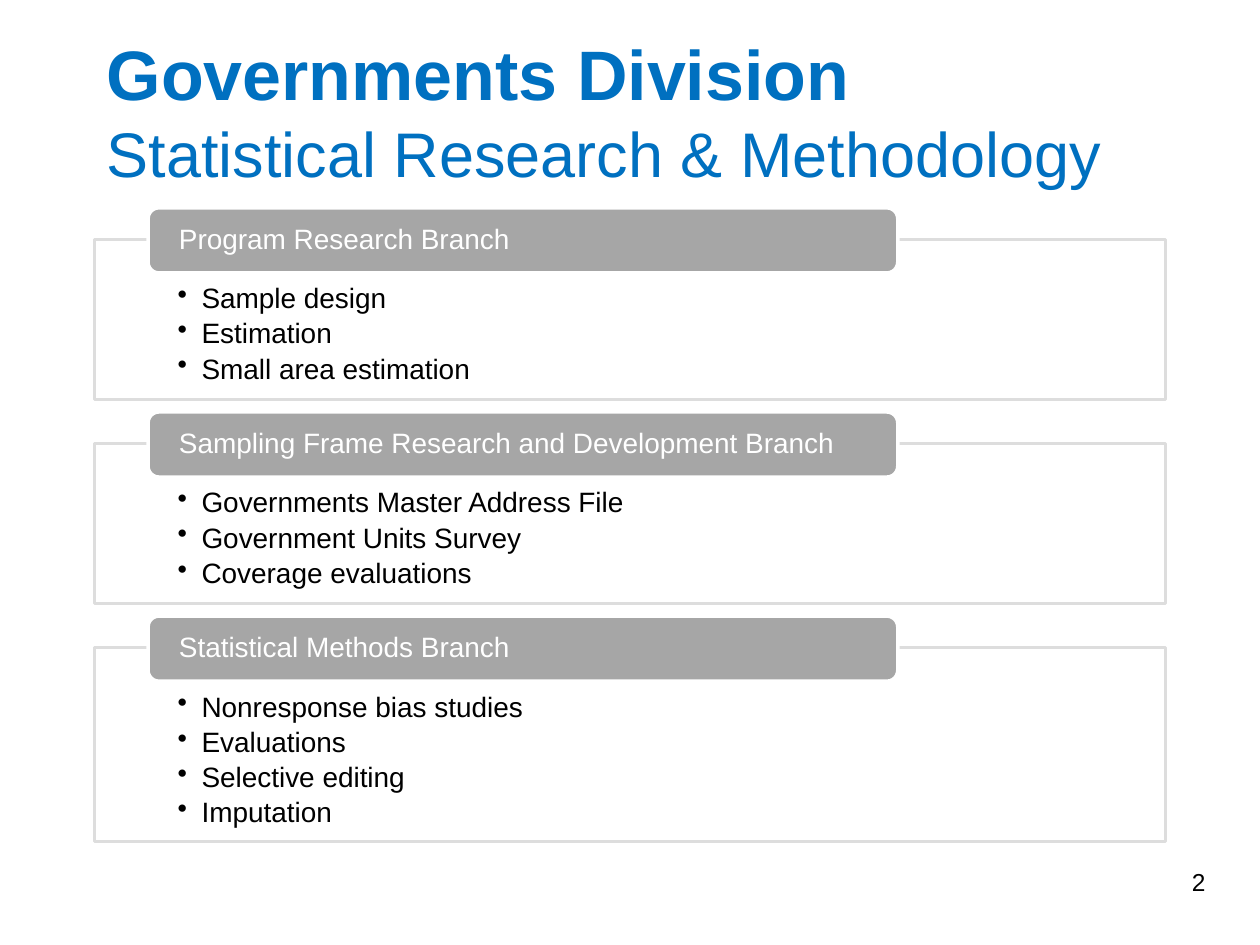
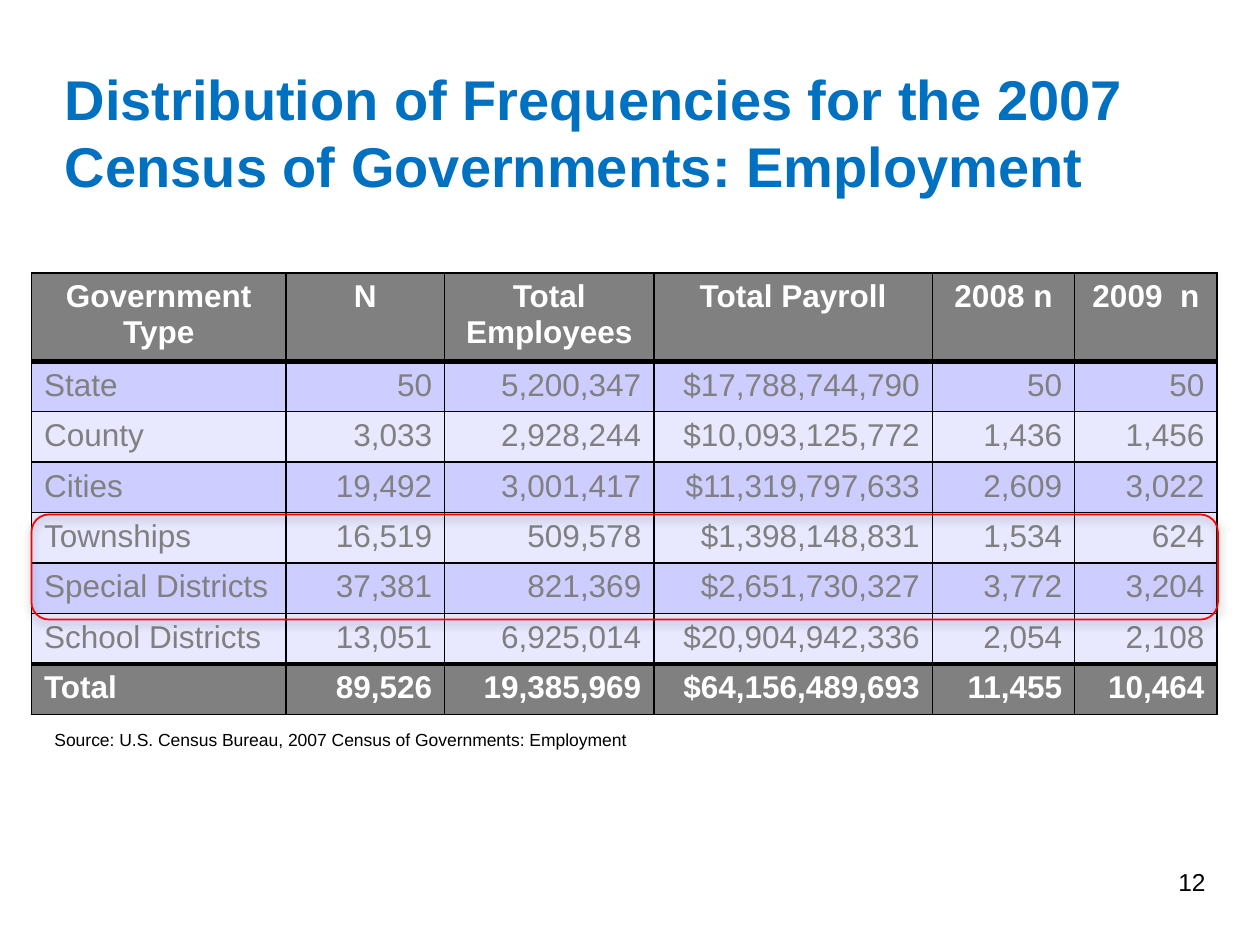
from dataclasses import dataclass

from lxml.etree import SubElement
from pptx import Presentation
from pptx.dml.color import RGBColor
from pptx.enum.shapes import MSO_SHAPE
from pptx.enum.text import MSO_ANCHOR, PP_ALIGN
from pptx.oxml import parse_xml
from pptx.oxml.ns import nsdecls, qn
from pptx.util import Inches, Pt

COLUMNS, ROWS = 120, 90
WIDTH, HEIGHT = Inches(10), Inches(7.5)
FONT = "Arial"
TITLE_BLUE, BLACK, WHITE = "0070C0", "000000", "FFFFFF"
FRAME_GRAY, HEADING_GRAY, TABLE_GRAY = "DDDDDD", "A6A6A6", "808080"
BANDS = "CDCDFF", "E8E8FF"
HIGHLIGHT = "FF0000"

BRANCHES = {
    "Program Research Branch": [
        "Sample design", "Estimation", "Small area estimation"],
    "Sampling Frame Research and Development Branch": [
        "Governments Master Address File", "Government Units Survey",
        "Coverage evaluations"],
    "Statistical Methods Branch": [
        "Nonresponse bias studies", "Evaluations", "Selective editing",
        "Imputation"],
}

FREQUENCIES = [
    ("Government Type", "N", "Total Employees", "Total Payroll", "2008 n", "2009  n"),
    ("State", "50", "5,200,347", "$17,788,744,790", "50", "50"),
    ("County", "3,033", "2,928,244", "$10,093,125,772", "1,436", "1,456"),
    ("Cities", "19,492", "3,001,417", "$11,319,797,633", "2,609", "3,022"),
    ("Townships", "16,519", "509,578", "$1,398,148,831", "1,534", "624"),
    ("Special Districts", "37,381", "821,369", "$2,651,730,327", "3,772", "3,204"),
    ("School Districts", "13,051", "6,925,014", "$20,904,942,336", "2,054", "2,108"),
    ("Total", "89,526", "19,385,969", "$64,156,489,693", "11,455", "10,464"),
]
COLUMN_INCHES = 2.02, 1.26, 1.66, 2.21, 1.13, 1.13
ROW_INCHES = 0.69, *[0.4] * 6, 0.39


@dataclass
class Box:
    """A rectangle in grid columns and rows."""
    left: float
    top: float
    width: float
    height: float

    def place(self):
        """Return left, top, width and height as slide lengths."""
        column, row = WIDTH / COLUMNS, HEIGHT / ROWS
        return (round(self.left * column), round(self.top * row),
                round(self.width * column), round(self.height * row))


def rgb(value):
    """Turn a hex string into a colour."""
    return RGBColor.from_string(value)


def style(run, size, color, bold=False):
    """Set the font of one run."""
    run.font.name, run.font.size, run.font.bold = FONT, Pt(size), bold
    run.font.color.rgb = rgb(color)


def add_text(slide, box, text, sizes, color, bolds=(False,),
             align=PP_ALIGN.LEFT, anchor=MSO_ANCHOR.TOP):
    """Add a wrapped text box with one size and weight per line."""
    frame = slide.shapes.add_textbox(*box.place()).text_frame
    frame.word_wrap, frame.vertical_anchor = True, anchor
    frame.text = text
    frame.paragraphs[0].alignment = align
    for run, size, bold in zip(frame.paragraphs[0].runs, sizes, bolds):
        style(run, size, color, bold)


def add_title(slide, box, text, sizes, bolds):
    """Add the blue slide title."""
    add_text(slide, box, text, sizes, TITLE_BLUE, bolds, anchor=MSO_ANCHOR.MIDDLE)


def add_page_number(slide, number):
    """Add the page number at the bottom right."""
    add_text(slide, Box(91, 82, 25, 6), str(number), [14], BLACK,
             align=PP_ALIGN.RIGHT)


def add_panel(slide, kind, box, fill, line, weight):
    """Add a preset shape, unfilled when fill is None."""
    panel = slide.shapes.add_shape(kind, *box.place())
    panel.shadow.inherit = False
    if fill:
        panel.fill.solid()
        panel.fill.fore_color.rgb = rgb(fill)
    else:
        panel.fill.background()
    panel.line.color.rgb = rgb(line)
    panel.line.width = Pt(weight)
    return panel


def write_panel(panel, lines, color, insets, anchor, space_after, bulleted=False):
    """Write left-aligned lines into a panel."""
    frame = panel.text_frame
    frame.word_wrap, frame.vertical_anchor = True, anchor
    (frame.margin_left, frame.margin_top,
     frame.margin_right, frame.margin_bottom) = map(Inches, insets)
    frame.text = "\n".join(lines)
    for paragraph in frame.paragraphs:
        paragraph.alignment = PP_ALIGN.LEFT
        paragraph.line_spacing = 0.9
        paragraph.space_after = Pt(space_after)
        if bulleted:
            properties = paragraph._p.get_or_add_pPr()
            properties.set("marL", str(Inches(0.19)))
            properties.set("indent", str(-Inches(0.19)))
            SubElement(properties, qn("a:buChar"), char="•")
        style(paragraph.runs[0], 16, color)


def add_branch(slide, box, name, topics):
    """Add a framed list of topics with its heading on the top edge."""
    frame = add_panel(slide, MSO_SHAPE.RECTANGLE, box, WHITE, FRAME_GRAY, 2)
    write_panel(frame, topics, BLACK, (0.66, 0.36, 0.66, 0.12),
                MSO_ANCHOR.TOP, 2.8, bulleted=True)
    heading_box = Box(box.left + 0.05 * box.width, box.top - 3, 0.7 * box.width, 6.2)
    heading = add_panel(slide, MSO_SHAPE.ROUNDED_RECTANGLE, heading_box,
                        HEADING_GRAY, WHITE, 2)
    write_panel(heading, [name], WHITE, (0.22, 0, 0.22, 0), MSO_ANCHOR.MIDDLE, 0)


def add_branches(slide, box):
    """Stack the branches from the top of the box, sized by topic count."""
    top = box.top
    for name, topics in BRANCHES.items():
        height = 5.52 + 3.24 * len(topics)
        add_branch(slide, Box(box.left, top, box.width, height), name, topics)
        top += height + 4.2


def set_borders(cell, top, bottom):
    """Draw black borders on a cell, with given top and bottom weights."""
    properties = cell._tc.get_or_add_tcPr()
    for position, (side, weight) in enumerate(
            {"L": 1, "R": 1, "T": top, "B": bottom}.items()):
        properties.insert(position, parse_xml(
            f'<a:ln{side} {nsdecls("a")} w="{Pt(weight)}"><a:solidFill>'
            f'<a:srgbClr val="{BLACK}"/></a:solidFill></a:ln{side}>'))


def add_frequency_table(slide, box):
    """Add the table with a header, banded rows and a total."""
    last = len(FREQUENCIES) - 1
    table = slide.shapes.add_table(
        len(FREQUENCIES), len(COLUMN_INCHES), *box.place()).table
    for column, width in zip(table.columns, COLUMN_INCHES):
        column.width = Inches(width)
    for index, (row, height, values) in enumerate(
            zip(table.rows, ROW_INCHES, FREQUENCIES)):
        row.height = Inches(height)
        strong = index in (0, last)
        for position, (cell, value) in enumerate(zip(row.cells, values)):
            cell.text = value
            cell.fill.solid()
            cell.fill.fore_color.rgb = rgb(
                TABLE_GRAY if strong else BANDS[(index - 1) % 2])
            set_borders(cell, 3 if index in (1, last) else 1,
                        3 if index in (0, last - 1) else 1)
            paragraph = cell.text_frame.paragraphs[0]
            paragraph.alignment = (PP_ALIGN.CENTER if index == 0 else
                                   PP_ALIGN.RIGHT if position else PP_ALIGN.LEFT)
            style(paragraph.runs[0], 18, WHITE if strong else TABLE_GRAY, strong)


def add_highlight(slide, box):
    """Outline rows in red with a soft shadow below."""
    outline = add_panel(slide, MSO_SHAPE.ROUNDED_RECTANGLE, box, None, HIGHLIGHT, 1)
    effects = outline._element.spPr.find(qn("a:effectLst"))
    shadow = SubElement(effects, qn("a:outerShdw"), blurRad=str(Pt(5)),
                        dist=str(Pt(1.6)), dir=str(90 * 60000), rotWithShape="0")
    tint = SubElement(shadow, qn("a:srgbClr"), val=BLACK)
    SubElement(tint, qn("a:alpha"), val="38000")


def build_branch_slide(slide):
    """Build the overview of the division's branches."""
    add_title(slide, Box(9, 3, 102, 15),
              "Governments Division \vStatistical Research & Methodology",
              (40, 36), (True, False))
    add_branches(slide, Box(9, 22.8, 102, 57.4))
    add_page_number(slide, 2)


def build_frequency_slide(slide):
    """Build the table of employment frequencies."""
    add_page_number(slide, 12)
    add_title(slide, Box(5, 5, 111, 15),
              "Distribution of Frequencies for the 2007 "
              "Census of Governments: Employment", [32], [True])
    grid = Box(3, 26, 113, 42)
    add_frequency_table(slide, grid)
    add_text(slide, Box(4, 68.8, 92, 3.2),
             "Source: U.S. Census Bureau, 2007 Census of Governments: Employment",
             [10], BLACK)
    add_highlight(slide, Box(grid.left, grid.top + 23, grid.width, 10))


def main():
    """Create and save the presentation."""
    deck = Presentation()
    deck.slide_width, deck.slide_height = WIDTH, HEIGHT
    for build in (build_branch_slide, build_frequency_slide):
        build(deck.slides.add_slide(deck.slide_layouts[6]))
    deck.save("out.pptx")


if __name__ == "__main__":
    main()
